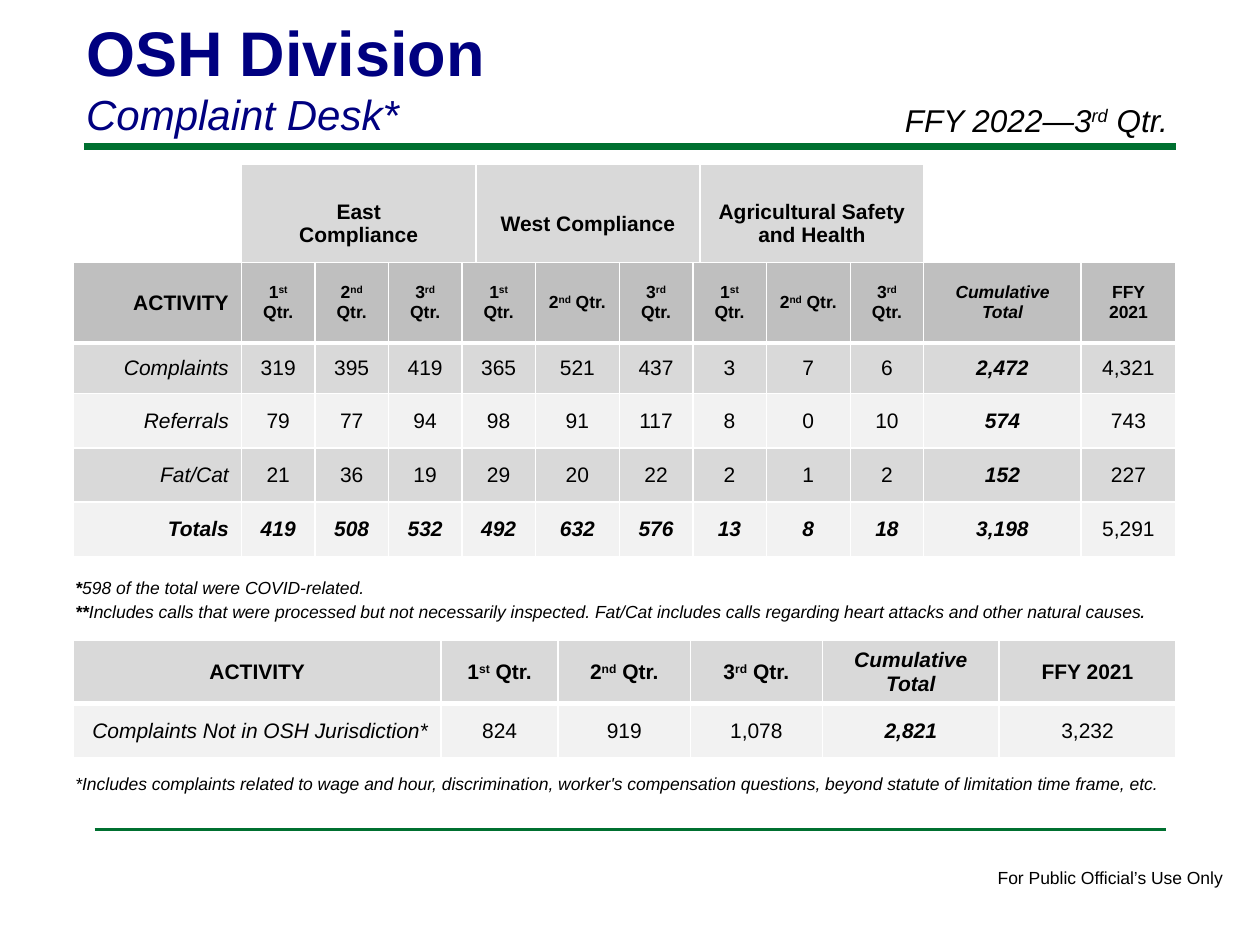
from lxml.etree import SubElement
from pptx import Presentation
from pptx.dml.color import RGBColor
from pptx.enum.shapes import MSO_CONNECTOR as CONN
from pptx.enum.text import MSO_ANCHOR as ANCHOR, MSO_AUTO_SIZE as AUTO, PP_ALIGN as ALIGN
from pptx.oxml.ns import qn
from pptx.util import Pt

BLACK, WHITE, NAVY, GREEN = "000000", "FFFFFF", "000080", "007030"
DARK, MID, LIGHT = "BFBFBF", "D9D9D9", "F2F2F2"
QUARTERS = ["1^st^ Qtr.", "2^nd^ Qtr.", "3^rd^ Qtr."]
TOTAL = "Cumulative Total"


def rgb(hex_color):
    return RGBColor.from_string(hex_color)


def add_text(p, text, size=12, color=BLACK, bold=False, italic=False, align=ALIGN.LEFT):
    """Add formatted text to a paragraph; parts between ^ marks are superscript."""
    p.alignment = align
    for i, part in enumerate(text.split("^")):
        r = p.add_run()
        r.text = part
        f = r.font
        f.name, f.size, f.bold, f.italic = "Arial", Pt(size), bold, italic
        f.color.rgb = rgb(color)
        if i % 2:
            r._r.get_or_add_rPr().set("baseline", "30000")


def add_paragraphs(tf, paragraphs):
    """Each paragraph is a list of (text, format) runs."""
    for i, runs in enumerate(paragraphs):
        p = tf.paragraphs[0] if i == 0 else tf.add_paragraph()
        for text, fmt in runs:
            add_text(p, text, **fmt)


def set_borders(cell, bottom):
    tc_pr = cell._tc.get_or_add_tcPr()
    for side, width in zip("LRTB", (1, 1, 1, bottom)):
        ln = SubElement(tc_pr, qn("a:ln" + side), w=str(Pt(width)))
        fill = SubElement(ln, qn("a:solidFill"))
        SubElement(fill, qn("a:srgbClr"), val=WHITE)


class ReportSlide:
    def __init__(self, prs):
        self.s = prs.slides.add_slide(prs.slide_layouts[5])

    def title(self, x, y, w, h, paragraphs):
        sp = self.s.shapes.title
        sp.left, sp.top, sp.width, sp.height = Pt(x), Pt(y), Pt(w), Pt(h)
        tf = sp.text_frame
        tf.auto_size, tf.vertical_anchor = AUTO.NONE, ANCHOR.TOP
        add_paragraphs(tf, paragraphs)

    def text(self, x, y, w, h, paragraphs, wrap=True):
        tf = self.s.shapes.add_textbox(Pt(x), Pt(y), Pt(w), Pt(h)).text_frame
        tf.word_wrap = wrap
        add_paragraphs(tf, paragraphs)

    def rule(self, x1, x2, y, width):
        c = self.s.shapes.add_connector(CONN.STRAIGHT, Pt(x1), Pt(y), Pt(x2), Pt(y))
        c.line.color.rgb, c.line.width = rgb(GREEN), Pt(width)
        SubElement(c._element.spPr, qn("a:effectLst"))

    def table(self, x, y, widths, heights, rows, fills, cell_format):
        """cell_format(row, column) gives the text format of a cell."""
        t = self.s.shapes.add_table(len(rows), len(widths), Pt(x), Pt(y),
                                    Pt(sum(widths)), Pt(sum(heights))).table
        t.first_row = t.horz_banding = False
        for col, w in zip(t.columns, widths):
            col.width = Pt(w)
        for i, (row, h, fill) in enumerate(zip(rows, heights, fills)):
            t.rows[i].height = Pt(h)
            for j, text in enumerate(row):
                cell = t.cell(i, j)
                cell.vertical_anchor = ANCHOR.MIDDLE
                set_borders(cell, 3 if i == 0 else 1)
                cell.fill.solid()
                cell.fill.fore_color.rgb = rgb(fill)
                add_paragraphs(cell.text_frame,
                               [[(line, cell_format(i, j))] for line in text.split("\n")])


def region_format(i, j):
    return dict(bold=True, align=ALIGN.CENTER)


def activity_format(i, j):
    total_row = i == 4 and j < 11
    return dict(size=10 if i == 0 and j > 0 else 12,
                bold=i == 0 or j == 10 or total_row,
                italic=j == 10 or total_row or (i > 0 and j == 0),
                align=ALIGN.RIGHT if j == 0 else ALIGN.CENTER)


def other_format(i, j):
    return dict(bold=i == 0 or j == 4,
                italic=j == 4 or (i == 1 and j == 0),
                align=ALIGN.RIGHT if i == 1 and j == 0 else ALIGN.CENTER)


def main():
    prs = Presentation()
    prs.slide_width, prs.slide_height = Pt(720), Pt(540)
    slide = ReportSlide(prs)
    note, strong = dict(size=10, italic=True), dict(size=10, italic=True, bold=True)

    # Rules and footer
    slide.rule(48, 672, 84, 4)
    slide.rule(54, 666, 474, 2)
    slide.text(563, 492, 145, 19.4,
               [[("For Public Official’s Use Only", dict(size=10))]], wrap=False)

    # Heading
    slide.title(42, 4, 594, 80, [
        [("OSH Division", dict(size=36, color=NAVY, bold=True))],
        [("Complaint Desk*", dict(size=24, color=NAVY, italic=True))]])
    slide.text(510, 54, 180, 29, [[("FFY 2022—3^rd^ Qtr.", dict(size=18, italic=True))]])

    # Region headings above the activity table
    slide.table(138, 93.6, [134, 128, 128], [68.4],
                [["East\nCompliance", "West Compliance", "Agricultural Safety and Health"]],
                [MID], region_format)

    # Activity by region and quarter
    slide.table(42, 150, [96] + [42, 42, 42] + [42, 48, 42] * 2 + [90, 54],
                [46, 29, 31, 31, 31], [
        ["ACTIVITY", *QUARTERS * 3, TOTAL, "FFY 2021"],
        ["Complaints", "319", "395", "419", "365", "521", "437", "3", "7", "6", "2,472", "4,321"],
        ["Referrals", "79", "77", "94", "98", "91", "117", "8", "0", "10", "574", "743"],
        ["Fat/Cat", "21", "36", "19", "29", "20", "22", "2", "1", "2", "152", "227"],
        ["Totals", "419", "508", "532", "492", "632", "576", "13", "8", "18", "3,198", "5,291"],
    ], [DARK, MID, LIGHT, MID, LIGHT], activity_format)
    slide.text(36, 326, 636, 48, [
        [("*", strong), ("598 of the total were COVID-related.", note)],
        [("**", strong),
         ("Includes calls that were processed but not necessarily inspected. "
          "Fat/Cat includes calls regarding heart attacks and other natural causes", note),
         (".", dict(italic=True))]])

    # Complaints outside jurisdiction
    slide.table(42, 366, [210, 67, 75.5, 75.5, 101, 101], [36, 31], [
        ["ACTIVITY", *QUARTERS, TOTAL, "FFY 2021"],
        ["Complaints Not in OSH Jurisdiction*", "824", "919", "1,078", "2,821", "3,232"],
    ], [MID, LIGHT], other_format)
    slide.text(36, 438, 642, 19.4, [
        [("*Includes complaints related to wage and hour, discrimination, worker's compensation "
          "questions, beyond statute of limitation time frame, etc.", note)]])

    prs.save("out.pptx")


if __name__ == "__main__":
    main()
